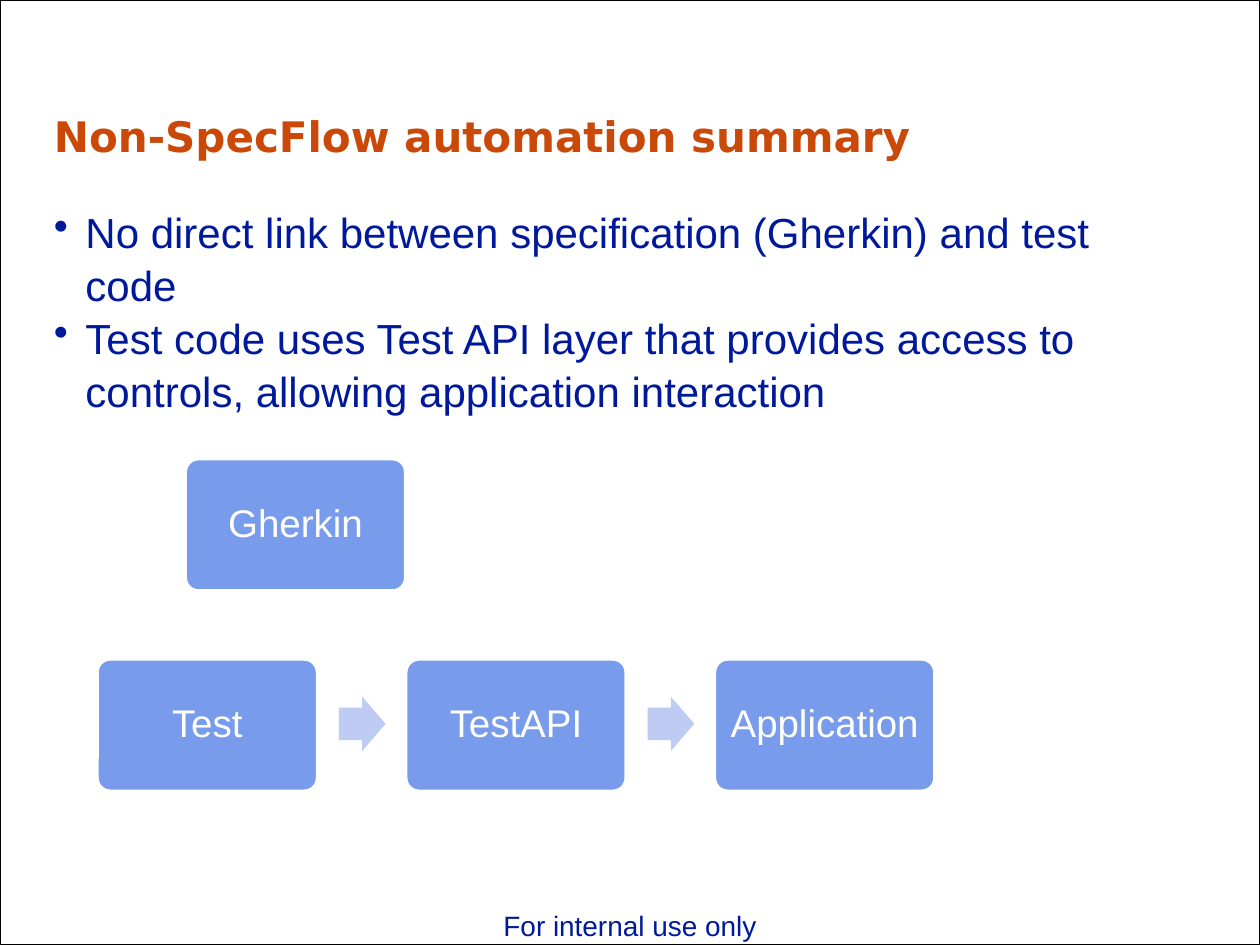
from lxml import etree
from pptx import Presentation
from pptx.dml.color import RGBColor
from pptx.enum import shapes, text
from pptx.oxml.ns import qn
from pptx.util import Inches, Pt

NAVY, ORANGE, BLUE, PALE, WHITE, BLACK = "00199B", "CA4908", "789BEB", "BECBF3", "FFFFFF", "000000"


def paint(color_format, value):
    color_format.rgb = RGBColor.from_string(value)


def write(paragraph, words, size, color, font="Arial", bold=False):
    run = paragraph.add_run()
    run.text = words
    run.font.size = Pt(size)
    run.font.name = font
    run.font.bold = bold
    paint(run.font.color, color)


prs = Presentation()
prs.slide_width, prs.slide_height = Inches(10), Inches(7.5)
slide = prs.slides.add_slide(prs.slide_layouts[6])

border = slide.shapes.add_shape(shapes.MSO_SHAPE.RECTANGLE, 0, 0, Inches(10), Inches(7.5))
border.shadow.inherit = False
border.fill.background()
paint(border.line.color, BLACK)
border.line.width = Pt(0.5)

footer = slide.shapes.add_textbox(0, Inches(7.16), Inches(10), Inches(0.37)).text_frame
footer.word_wrap = True
footer.paragraphs[0].alignment = text.PP_ALIGN.CENTER
write(footer.paragraphs[0], "For internal use only", 16, NAVY)

title = slide.shapes.add_textbox(Inches(0.33), Inches(0.83), Inches(8.63), Inches(0.5)).text_frame
title.word_wrap = True
write(title.paragraphs[0], "Non-SpecFlow automation summary", 24, ORANGE, "DejaVu Sans", True)

steps = ["Test", "TestAPI", "Application"]
pitch = 2.45
boxes = [(name, 0.77 + i * pitch, 5.23) for i, name in enumerate(steps)]
boxes.append(("Gherkin", 1.47, 3.64))
for name, left, top in boxes:
    box = slide.shapes.add_shape(
        shapes.MSO_SHAPE.ROUNDED_RECTANGLE, Inches(left), Inches(top), Inches(1.75), Inches(1.05))
    box.adjustments[0] = 0.1
    box.shadow.inherit = False
    box.fill.solid()
    paint(box.fill.fore_color, BLUE)
    paint(box.line.color, WHITE)
    box.line.width = Pt(2)
    label = box.text_frame
    label.word_wrap = True
    label.margin_left = label.margin_right = Inches(0.05)
    label.vertical_anchor = text.MSO_ANCHOR.MIDDLE
    label.paragraphs[0].alignment = text.PP_ALIGN.CENTER
    label.paragraphs[0].line_spacing = 0.9
    write(label.paragraphs[0], name, 22, WHITE)

for i in range(len(steps) - 1):
    arrow = slide.shapes.add_shape(
        shapes.MSO_SHAPE.RIGHT_ARROW, Inches(2.69 + i * pitch), Inches(5.53), Inches(0.37), Inches(0.43))
    arrow.adjustments[0] = 0.6
    arrow.adjustments[1] = 0.5
    arrow.shadow.inherit = False
    arrow.fill.solid()
    paint(arrow.fill.fore_color, PALE)
    arrow.line.fill.background()

summary = slide.shapes.add_textbox(Inches(0.33), Inches(1.57), Inches(9.21), Inches(1.72)).text_frame
summary.word_wrap = True
points = [
    "No direct link between specification (Gherkin) and test code",
    "Test code uses Test API layer that provides access to controls, allowing application interaction",
]
for i, point in enumerate(points):
    paragraph = summary.add_paragraph() if i else summary.paragraphs[0]
    props = paragraph._p.get_or_add_pPr()
    props.set("marL", str(Inches(0.25)))
    props.set("indent", str(Inches(-0.25)))
    etree.SubElement(props, qn("a:buChar")).set("char", "•")
    tabs = etree.SubElement(props, qn("a:tabLst"))
    for stop in (0.19, 0.57):
        tab = etree.SubElement(tabs, qn("a:tab"))
        tab.set("pos", str(Inches(stop)))
        tab.set("algn", "l")
    paragraph.line_spacing = 1.05
    write(paragraph, point, 24, NAVY)

prs.save("out.pptx")
